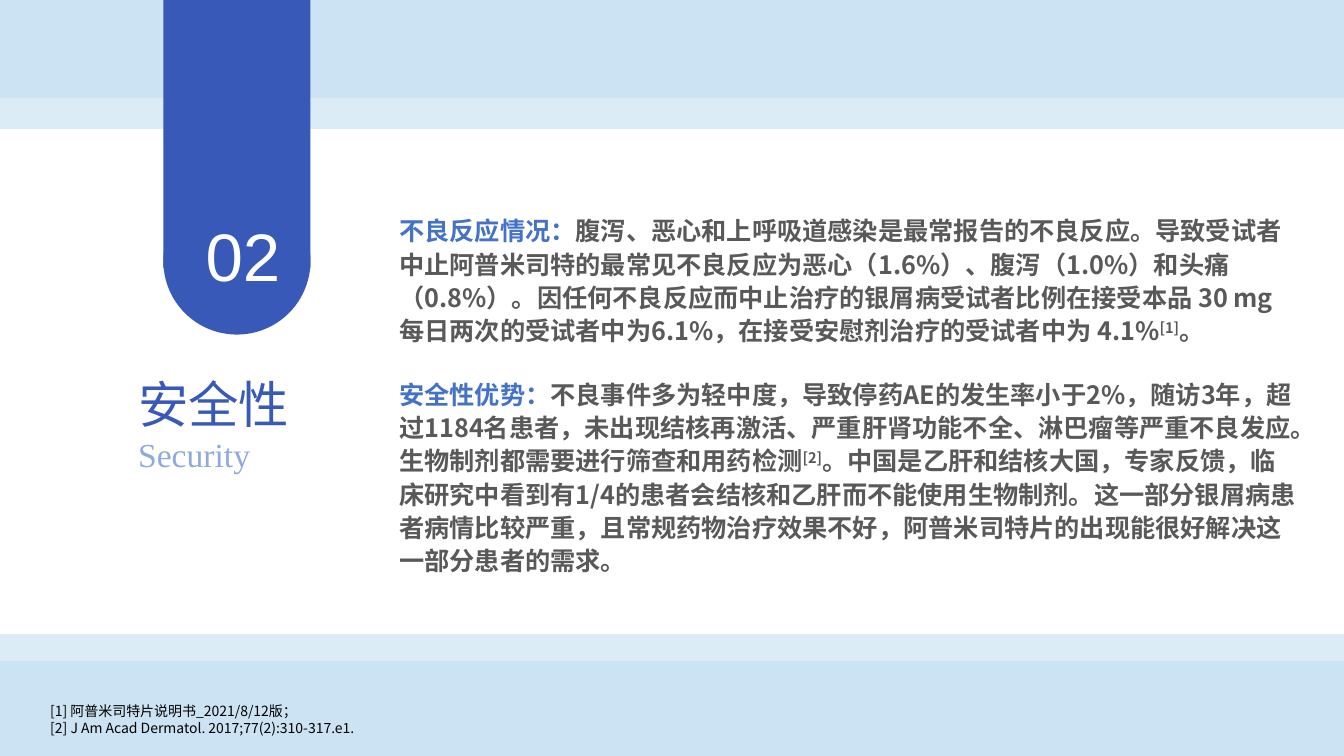
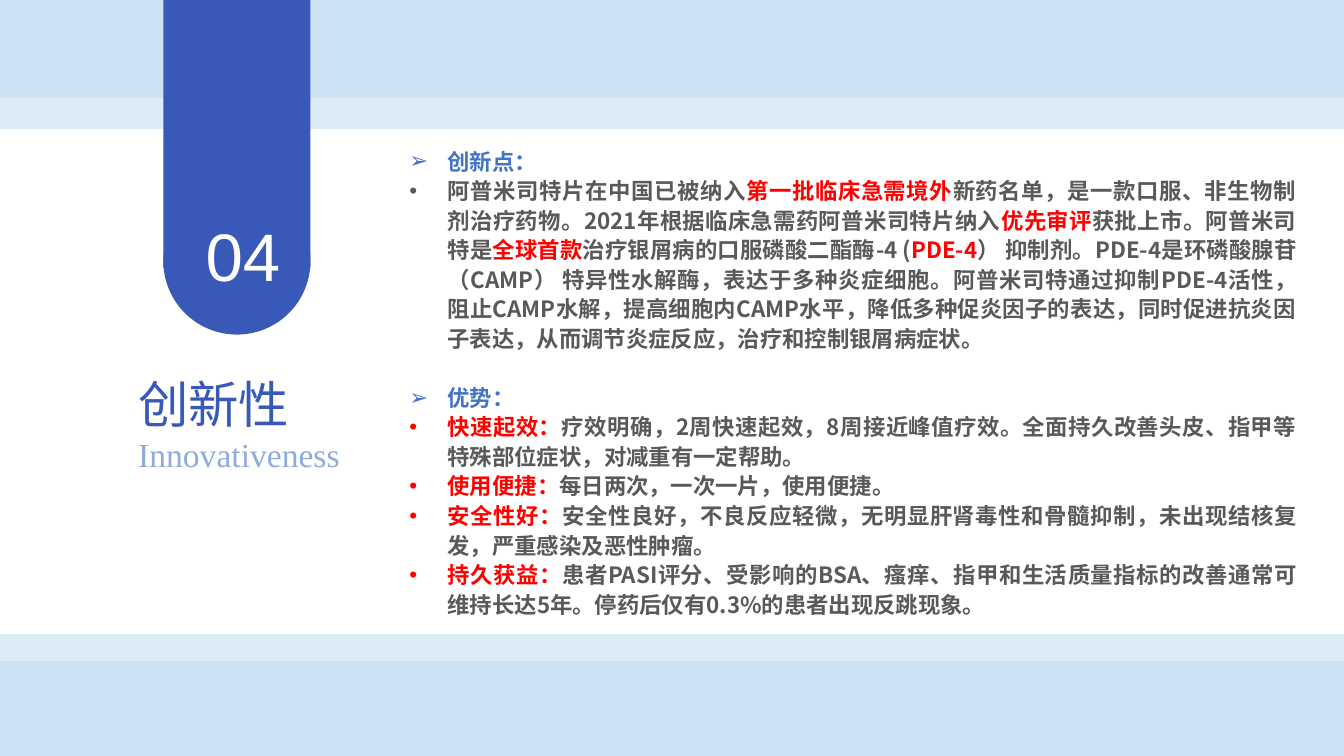
from collections import namedtuple
from dataclasses import dataclass

from lxml.etree import SubElement
from pptx import Presentation
from pptx.dml.color import RGBColor
from pptx.enum.shapes import MSO_SHAPE as Shape
from pptx.enum.text import MSO_ANCHOR as Anchor, MSO_AUTO_SIZE as Fit, PP_ALIGN as Align
from pptx.oxml.ns import qn
from pptx.util import Inches, Pt

Box = namedtuple("Box", "left top width height")


@dataclass(frozen=True)
class Theme:
    sky: str = "CCE3F3"
    mist: str = "DCECF7"
    white: str = "FFFFFF"
    navy: str = "3859B8"
    pale: str = "8FAADC"
    blue: str = "4472C4"
    ink: str = "595959"
    red: str = "FF0000"
    black: str = "000000"
    sans: str = "Noto Sans CJK SC"
    serif: str = "Times New Roman"
    digit: str = "Arial"
    huge: int = 48
    head: int = 36
    sub: int = 24
    text: int = 18
    list: int = 16
    note: int = 10


T = Theme()
PAGE = Box(0, 0, 13.33, 7.5)
TAB = Box(1.62, 0, 1.46, 3.32)


def put(par, *parts, size, face=T.sans, tone=T.ink, bold=False,
        pitch=None, gap=0, align=Align.LEFT, mark=None, hang=0):
    par.alignment = align
    par.space_before = Pt(gap)
    if pitch:
        par.line_spacing = Pt(pitch)
    props = par._p.get_or_add_pPr()
    props.set("marL", str(Inches(hang)))
    props.set("indent", str(-Inches(hang)))
    if mark:
        SubElement(props, qn("a:buFont")).set("typeface", T.digit)
        SubElement(props, qn("a:buChar")).set("char", mark)
    else:
        SubElement(props, qn("a:buNone"))
    for part in parts:
        words, shade, lift = (part, tone, 0) if isinstance(part, str) else part
        run = par.add_run()
        run.text = words
        font = run.font
        font.size, font.bold, font.name = Pt(size), bold, face
        font.color.rgb = RGBColor.from_string(shade)
        look = run._r.get_or_add_rPr()
        SubElement(look, qn("a:ea")).set("typeface", face)
        if lift:
            look.set("baseline", str(lift * 1000))


def red(words):
    return words, T.red, 0


def blue(words):
    return words, T.blue, 0


def cite(words):
    return words, T.ink, 30


def fill(frame, rows):
    frame.word_wrap = True
    frame.auto_size = Fit.NONE
    frame.vertical_anchor = Anchor.TOP
    for i, (parts, form) in enumerate(rows):
        par = frame.add_paragraph() if i else frame.paragraphs[0]
        put(par, *parts, **form)


def block(slide, kind, box, tone):
    shape = slide.shapes.add_shape(kind, *map(Inches, box))
    shape.shadow.inherit = False
    shape.fill.solid()
    shape.fill.fore_color.rgb = RGBColor.from_string(tone)
    shape.line.fill.background()


def label(slide, box, rows):
    fill(slide.shapes.add_textbox(*map(Inches, box)).text_frame, rows)


def holder(slide, spot, box, rows):
    shape = slide.placeholders[spot]
    shape.left, shape.top, shape.width, shape.height = map(Inches, box)
    fill(shape.text_frame, rows)
    slide.shapes.element.append(shape.element)


def bands(slide, box):
    for top, high, tone in ((0.97, 5.59, T.mist), (1.28, 5.01, T.white)):
        block(slide, Shape.RECTANGLE, Box(box.left, box.top + top, box.width, high), tone)


def tab(slide, box, num):
    wide = box.width
    end = box.top + box.height
    block(slide, Shape.OVAL, Box(box.left, end - wide, wide, wide), T.navy)
    block(slide, Shape.RECTANGLE, box._replace(height=box.height - 0.66), T.navy)
    label(slide, Box(box.left + 0.32, end - 1.24, 1.34, 0.91),
          [((num,), dict(size=T.huge, face=T.digit, tone=T.white))])


def page(deck, num, name, gloss, box, rows):
    slide = deck.slides.add_slide(deck.slide_layouts[1])
    bands(slide, PAGE)
    tab(slide, TAB, num)
    holder(slide, 0, Box(1.27, 3.63, 2.4, 1.11), [
        ((name,), dict(size=T.head, tone=T.navy, pitch=45)),
        ((gloss,), dict(size=T.sub, face=T.serif, tone=T.pale)),
    ])
    holder(slide, 1, box, rows)
    return slide


def safety(deck):
    form = dict(size=T.text, bold=True, pitch=23.8)
    rows = [
        ((blue("不良反应情况："),
          "腹泻、恶心和上呼吸道感染是最常报告的不良反应。导致受试者中止阿普米司特的最常见"
          "不良反应为恶心（1.6%）、腹泻（1.0%）和头痛（0.8%）。因任何不良反应而中止治疗的"
          "银屑病受试者比例在接受本品 30 mg 每日两次的受试者中为6.1%，在接受安慰剂治疗的"
          "受试者中为 4.1%", cite("[1]"), "。"), form),
        ((blue("安全性优势："),
          "不良事件多为轻中度，导致停药AE的发生率小于2%，随访3年，超过1184名患者，"
          "未出现结核再激活、严重肝肾功能不全、淋巴瘤等严重不良发应。生物制剂都需要进行"
          "筛查和用药检测", cite("[2]"),
          "。中国是乙肝和结核大国，专家反馈，临床研究中看到有1/4的患者会结核和乙肝而"
          "不能使用生物制剂。这一部分银屑病患者病情比较严重，且常规药物治疗效果不好，"
          "阿普米司特片的出现能很好解决这一部分患者的需求。"), form | dict(gap=21.4)),
    ]
    slide = page(deck, "02", "安全性", "Security", Box(3.86, 2.06, 9.1, 4.37), rows)
    note = dict(size=T.note, tone=T.black, pitch=12.1)
    label(slide, Box(0.4, 6.92, 3.6, 0.5), [
        (("[1] 阿普米司特片说明书_2021/8/12版；",), note),
        (("[2] J Am Acad Dermatol. 2017;77(2):310-317.e1.",), note),
    ])


def novelty(deck):
    dot = dict(size=T.list, bold=True, pitch=21.1, align=Align.JUSTIFY, mark="•", hang=0.38)
    head = dot | dict(mark="➢", tone=T.blue)
    gains = (
        ("快速起效：", "疗效明确，2周快速起效，8周接近峰值疗效。全面持久改善头皮、指甲等"
                  "特殊部位症状，对减重有一定帮助。"),
        ("使用便捷：", "每日两次，一次一片，使用便捷。"),
        ("安全性好：", "安全性良好，不良反应轻微，无明显肝肾毒性和骨髓抑制，未出现结核复发，"
                  "严重感染及恶性肿瘤。"),
        ("持久获益：", "患者PASI评分、受影响的BSA、瘙痒、指甲和生活质量指标的改善通常可维持"
                  "长达5年。停药后仅有0.3%的患者出现反跳现象。"),
    )
    rows = [
        (("创新点：",), head),
        (("阿普米司特片在中国已被纳入", red("第一批临床急需境外"),
          "新药名单，是一款口服、非生物制剂治疗药物。2021年根据临床急需药阿普米司特片纳入",
          red("优先审评"), "获批上市。阿普米司特是", red("全球首款"),
          "治疗银屑病的口服磷酸二酯酶-4 (", red("PDE-4"),
          "） 抑制剂。PDE-4是环磷酸腺苷（CAMP） 特异性水解酶，表达于多种炎症细胞。"
          "阿普米司特通过抑制PDE-4活性，阻止CAMP水解，提高细胞内CAMP水平，降低多种"
          "促炎因子的表达，同时促进抗炎因子表达，从而调节炎症反应，治疗和控制银屑病症状。"), dot),
        (("优势：",), head | dict(gap=21.1)),
    ]
    rows += [((red(name), text), dot) for name, text in gains]
    page(deck, "04", "创新性", "Innovativeness", Box(3.96, 1.39, 9, 4.9), rows)


def main():
    deck = Presentation()
    deck.slide_width, deck.slide_height = Inches(PAGE.width), Inches(PAGE.height)
    back = deck.slide_master.background.fill
    back.solid()
    back.fore_color.rgb = RGBColor.from_string(T.sky)
    safety(deck)
    novelty(deck)
    deck.save("out.pptx")


if __name__ == "__main__":
    main()
